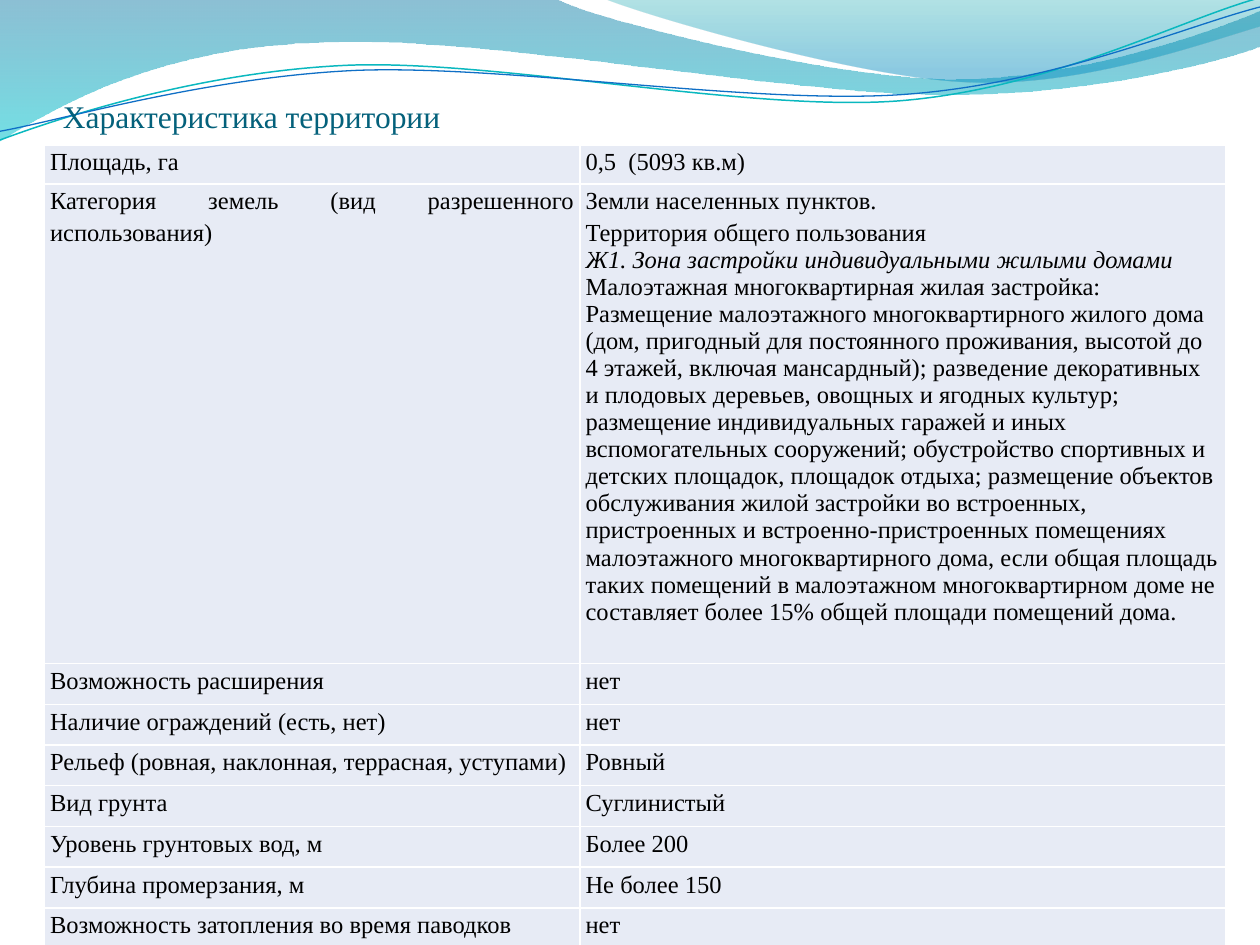
from dataclasses import dataclass

import pptx
import pptx.dml.color
import pptx.enum.text
import pptx.oxml
import pptx.oxml.ns
import pptx.util

Pt = pptx.util.Pt
RGB = pptx.dml.color.RGBColor.from_string
qn = pptx.oxml.ns.qn
ALIGN = pptx.enum.text.PP_ALIGN
ANCHOR = pptx.enum.text.MSO_ANCHOR


@dataclass(frozen=True)
class Theme:
    font: str = "Times New Roman"
    title_size: int = 18
    body_size: int = 14
    title: str = "04617B"
    text: str = "000000"
    cell: str = "E7EBF5"
    border: str = "FFFFFF"
    teal_line: str = "0AB8BF"
    blue_line: str = "0F6FC6"
    # Gradient stops: position, colour, opacity in percent
    band: tuple = ((0, "0074A1", 45), (1, "00C6CF", 55))
    swoosh: tuple = ((0, "00A1A9", 30), (0.8, "008BBF", 45))


THEME = Theme()

# Outlines in points: a start, then line ends (2 numbers) or Bezier curves (6 numbers)
BAND = [(0, 0), (317, -1), (343, 12, 478, 45, 546, 45), (614, 45, 690, 19, 720, 6),
        (721, 26), (708, 32, 626, 55, 537, 54), (448, 54, 275, 20, 185, 24),
        (93, 26, 33, 60, -1, 81)]
SWOOSH = [(345, -1), (366, 8, 491, 45, 554, 47), (619, 50, 692, 23, 720, 15), (720, 0)]
TEAL_WAVE = [(0, 80), (35, 67, 114, 41, 199, 37.3), (284, 34, 427, 64, 513, 57.7),
             (600, 51, 675, 11, 719, -1)]
BLUE_WAVE = [(0, 75), (34, 69, 118, 44, 204, 40.2), (290, 37, 430, 60, 516, 54),
             (602, 48, 677, 15, 720, 4)]

LAND_USE = (
    "Малоэтажная многоквартирная жилая застройка: Размещение малоэтажного "
    "многоквартирного жилого дома (дом, пригодный для постоянного проживания, "
    "высотой до 4 этажей, включая мансардный); разведение декоративных и плодовых "
    "деревьев, овощных и ягодных культур; размещение индивидуальных гаражей и иных "
    "вспомогательных сооружений; обустройство спортивных и детских площадок, площадок "
    "отдыха; размещение объектов обслуживания жилой застройки во встроенных, "
    "пристроенных и встроенно-пристроенных помещениях малоэтажного многоквартирного "
    "дома, если общая площадь таких помещений в малоэтажном многоквартирном доме не "
    "составляет более 15% общей площади помещений дома.")

SPACED = {"line_spacing": 1.15}
JUSTIFIED = {"line_spacing": 1.15, "alignment": ALIGN.JUSTIFY}
LAND_CATEGORY = [
    ("Земли населенных пунктов.", SPACED, {}),
    ("Территория общего пользования", SPACED, {}),
    ("Ж1. Зона застройки индивидуальными жилыми домами", {}, {"italic": True}),
    (LAND_USE, {}, {}),
]
ROWS = [
    ("Площадь, га", "0,5  (5093 кв.м)"),
    ("Категория земель (вид разрешенного использования)", LAND_CATEGORY),
    ("Возможность расширения", "нет"),
    ("Наличие ограждений (есть, нет)", "нет"),
    ("Рельеф (ровная, наклонная, террасная, уступами)", "Ровный"),
    ("Вид грунта", "Суглинистый"),
    ("Уровень грунтовых вод, м", "Более 200"),
    ("Глубина промерзания, м", "Не более 150"),
    ("Возможность затопления во время паводков", "нет"),
]
COLUMN_WIDTHS = (306, 369)
ROW_HEIGHTS = [22.3, 249] + [23.3] * (len(ROWS) - 2)


def apply(obj, values):
    for name, value in values.items():
        setattr(obj, name, value)


def add_outline(s, outline, closed):
    points = [(Pt(seg[i]), Pt(seg[i + 1])) for seg in outline
              for i in range(0, len(seg), 2)]
    builder = s.shapes.build_freeform(*points[0])
    builder.add_line_segments(points[1:], close=closed)
    sp = builder.convert_to_shape()
    sp.shadow.inherit = False
    bend_curves(sp, outline)
    return sp


def bend_curves(sp, outline):
    """Join the three line segments of each curve into one Bezier segment."""
    segments = iter(list(sp._element.iter(qn("a:lnTo"))))
    for seg in outline[1:]:
        first = next(segments)
        if len(seg) == 2:
            continue
        curve = pptx.oxml.parse_xml(f'<a:cubicBezTo {pptx.oxml.ns.nsdecls("a")}/>')
        first.addprevious(curve)
        for line in (first, next(segments), next(segments)):
            curve.append(line[0])
            line.getparent().remove(line)


def add_gradient_area(s, outline, stops):
    sp = add_outline(s, outline, True)
    sp.line.fill.background()
    sp.fill.gradient()
    sp.fill.gradient_angle = 270
    for stop, (position, color, _) in zip(sp.fill.gradient_stops, stops):
        stop.position = position
        stop.color.rgb = RGB(color)
    for clr, (_, _, opacity) in zip(sp._element.spPr.iter(qn("a:srgbClr")), stops):
        alpha = pptx.oxml.parse_xml(
            f'<a:alpha {pptx.oxml.ns.nsdecls("a")} val="{opacity * 1000}"/>')
        clr.append(alpha)


def add_wave(s, outline, color, width):
    sp = add_outline(s, outline, False)
    sp.fill.background()
    sp.line.color.rgb = RGB(color)
    sp.line.width = Pt(width)


def write(tf, paragraphs, size, color):
    """Fill a text frame from (text, paragraph format, font format) items."""
    for i, (text, layout, style) in enumerate(paragraphs):
        p = tf.paragraphs[0] if i == 0 else tf.add_paragraph()
        apply(p, layout)
        r = p.add_run()
        r.text = text
        apply(r.font, {"name": THEME.font, "size": Pt(size), **style})
        r.font.color.rgb = RGB(color)


def add_title(s, text):
    tf = s.shapes.add_textbox(Pt(36), Pt(55.4), Pt(648), Pt(21.6)).text_frame
    apply(tf, {"word_wrap": True, "vertical_anchor": ANCHOR.BOTTOM, "margin_left": 0,
               "margin_right": 0, "margin_top": Pt(3.6), "margin_bottom": 0})
    write(tf, [(text, {}, {})], THEME.title_size, THEME.title)


def set_borders(cell, color, width):
    tcPr = cell._tc.get_or_add_tcPr()
    for side in ("lnL", "lnR", "lnT", "lnB"):
        tcPr.append(pptx.oxml.parse_xml(
            f'<a:{side} {pptx.oxml.ns.nsdecls("a")} w="{Pt(width)}"><a:solidFill>'
            f'<a:srgbClr val="{color}"/></a:solidFill></a:{side}>'))


def add_site_table(s):
    table = s.shapes.add_table(len(ROWS), len(COLUMN_WIDTHS), Pt(25.3), Pt(82.9),
                               Pt(sum(COLUMN_WIDTHS)), Pt(sum(ROW_HEIGHTS))).table
    apply(table, {"first_row": False, "horz_banding": False})
    for column, width in zip(table.columns, COLUMN_WIDTHS):
        column.width = Pt(width)
    for row, height, contents in zip(table.rows, ROW_HEIGHTS, ROWS):
        row.height = Pt(height)
        for cell, content in zip(row.cells, contents):
            apply(cell, {"margin_left": Pt(3.3), "margin_right": Pt(3.2),
                         "margin_top": 0, "margin_bottom": 0})
            set_borders(cell, THEME.border, 1)
            cell.fill.solid()
            cell.fill.fore_color.rgb = RGB(THEME.cell)
            if isinstance(content, str):
                content = [(content, JUSTIFIED, {})]
            write(cell.text_frame, content, THEME.body_size, THEME.text)


def main():
    prs = pptx.Presentation()
    prs.slide_width, prs.slide_height = Pt(720), Pt(540)
    s = prs.slides.add_slide(prs.slide_layouts[6])
    add_gradient_area(s, BAND, THEME.band)
    add_gradient_area(s, SWOOSH, THEME.swoosh)
    add_wave(s, TEAL_WAVE, THEME.teal_line, 0.85)
    add_wave(s, BLUE_WAVE, THEME.blue_line, 0.75)
    add_title(s, "Характеристика территории")
    add_site_table(s)
    prs.save("out.pptx")


if __name__ == "__main__":
    main()
